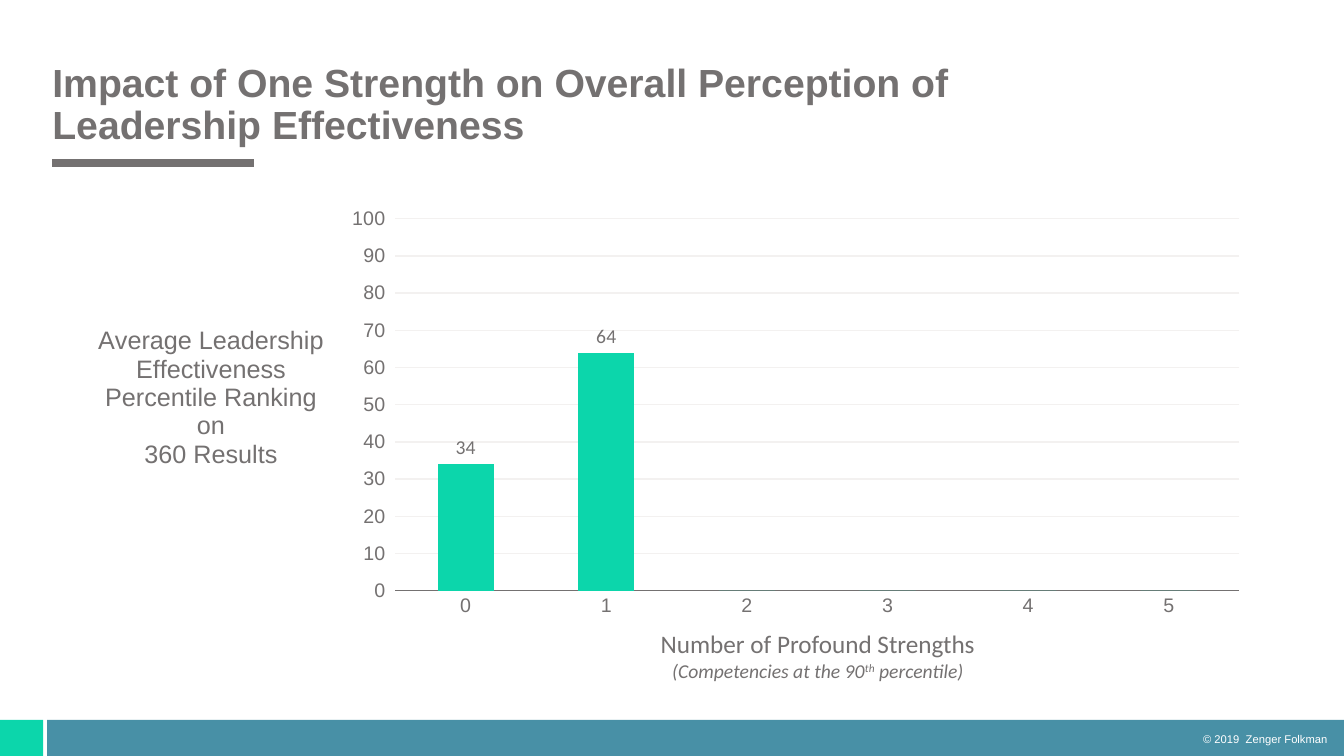
from lxml.etree import SubElement
from pptx import Presentation
from pptx.chart.data import CategoryChartData
from pptx.dml.color import RGBColor
from pptx.enum.chart import XL_CHART_TYPE, XL_LABEL_POSITION, XL_TICK_MARK
from pptx.enum.shapes import MSO_CONNECTOR, MSO_SHAPE
from pptx.enum.text import MSO_ANCHOR, PP_ALIGN
from pptx.oxml import parse_xml
from pptx.oxml.ns import nsdecls, qn
from pptx.util import Cm, Pt

GRAY, TEAL, BLUE, WHITE, GRID = "747171", "0CD6AB", "4890A6", "FFFFFF", "F3F1F0"
SLIDE_WIDTH, SLIDE_HEIGHT = 33.87, 19.05


def color(hex_string):
    """Turn a hex string into a color."""
    return RGBColor.from_string(hex_string)


def format_font(font, size, name="Arial", fill=GRAY, bold=False, italic=False):
    """Set the size, name, color and style of a font."""
    font.size, font.name, font.bold, font.italic = Pt(size), name, bold, italic
    font.color.rgb = color(fill)


def add_text(paragraph, text, superscript=False, **style):
    """Append formatted text, with a line break at each newline."""
    for number, line in enumerate(text.split("\n")):
        if number:
            paragraph.add_line_break()
        if line:
            run = paragraph.add_run()
            run.text = line
            format_font(run.font, **style)
            if superscript:
                run.font._element.set("baseline", "30000")


def add_text_box(slide, left, top, width, height, align, anchor):
    """Add a wrapping text box and return its first paragraph."""
    frame = slide.shapes.add_textbox(Cm(left), Cm(top), Cm(width), Cm(height)).text_frame
    frame.word_wrap = True
    frame.vertical_anchor = anchor
    paragraph = frame.paragraphs[0]
    paragraph.alignment = align
    return paragraph


def add_rectangle(slide, left, top, width, height, fill):
    """Add a plain filled rectangle."""
    shape = slide.shapes.add_shape(
        MSO_SHAPE.RECTANGLE, Cm(left), Cm(top), Cm(width), Cm(height))
    shape.shadow.inherit = False
    shape.fill.solid()
    shape.fill.fore_color.rgb = color(fill)
    shape.line.fill.background()


def add_heading(slide, left, top, width, height):
    """Add the title with the short rule below it."""
    paragraph = add_text_box(slide, left, top, width, height, PP_ALIGN.LEFT, MSO_ANCHOR.BOTTOM)
    paragraph.line_spacing = 0.9
    add_text(paragraph, "Impact of One Strength on Overall Perception of\nLeadership Effectiveness",
             size=28, bold=True)
    rule_left, rule_top = left + 0.25, top + height + 0.25
    rule = slide.shapes.add_connector(MSO_CONNECTOR.STRAIGHT, Cm(rule_left), Cm(rule_top),
                                      Cm(rule_left + 5.08), Cm(rule_top))
    rule.line.color.rgb = color(GRAY)
    rule.line.width = Pt(5.25)
    SubElement(rule._element.spPr, qn("a:effectLst"))


def set_layout(parent, index, **values):
    """Give a chart part a manual layout."""
    for layout in parent.findall(qn("c:layout")):
        parent.remove(layout)
    items = "".join(f'<c:{key} val="{value}"/>' for key, value in values.items())
    parent.insert(index, parse_xml(
        f'<c:layout {nsdecls("c")}><c:manualLayout>{items}</c:manualLayout></c:layout>'))


def format_axes(chart):
    """Format both axes, the gridlines and the value axis title."""
    category_axis, value_axis = chart.category_axis, chart.value_axis
    for axis in (category_axis, value_axis):
        format_font(axis.tick_labels.font, size=14)
    category_axis.major_tick_mark = XL_TICK_MARK.NONE
    category_axis.format.line.color.rgb = color(GRAY)
    category_axis.format.line.width = Pt(0.93)
    value_axis.minimum_scale, value_axis.maximum_scale, value_axis.major_unit = 0, 100, 10
    value_axis.format.line.fill.background()
    grid_line = value_axis.major_gridlines.format.line
    grid_line.color.rgb = color(GRID)
    grid_line.width = Pt(0.93)
    title = value_axis.axis_title
    frame = title.text_frame
    lines = ("Average Leadership Effectiveness Percentile Ranking on", "360 Results")
    for number, line in enumerate(lines):
        paragraph = frame.add_paragraph() if number else frame.paragraphs[0]
        paragraph.alignment = PP_ALIGN.CENTER
        add_text(paragraph, line, size=18)
    body = title._element.find(f'.//{qn("a:bodyPr")}')
    body.set("rot", "0")
    body.set("vert", "horz")
    set_layout(title._element, 1, xMode="edge", yMode="edge", x=0.002, y=0.25)


def add_strength_chart(slide, left, top, width, height):
    """Add the column chart with its caption."""
    data = CategoryChartData()
    data.categories = [str(count) for count in range(6)]
    data.add_series("Series 1", (34, 64, 0, 0, 0, 0))
    chart = slide.shapes.add_chart(XL_CHART_TYPE.COLUMN_CLUSTERED, Cm(left), Cm(top),
                                   Cm(width), Cm(height), data).chart
    chart.has_legend = chart.has_title = False
    format_font(chart.font, size=16.8, name="Calibri", bold=True)
    format_axes(chart)
    plot = chart.plots[0]
    plot.gap_width = 150
    plot.vary_by_categories = False
    fill = plot.series[0].format.fill
    fill.solid()
    fill.fore_color.rgb = color(TEAL)
    labels = plot.series[0].data_labels
    labels.show_value = True
    labels.number_format, labels.number_format_is_linked = "0;;;", False
    labels.position = XL_LABEL_POSITION.OUTSIDE_END
    format_font(labels.font, size=14, name="Calibri")
    set_layout(chart._chartSpace.chart.plotArea, 0, layoutTarget="inner", xMode="edge",
               yMode="edge", x=0.261, y=0.036, w=0.728, h=0.775)
    caption = add_text_box(slide, left + 10.23, top + 10.64, 16.08, 1.63,
                           PP_ALIGN.CENTER, MSO_ANCHOR.TOP)
    add_text(caption, "Number of Profound Strengths\n", size=18, name="Calibri")
    note = {"size": 14, "name": "Calibri", "italic": True}
    add_text(caption, "(Competencies at the 90", **note)
    add_text(caption, "th", superscript=True, **note)
    add_text(caption, " percentile)", **note)


def add_footer(slide, left, top, width, height):
    """Add the bottom band with the copyright line."""
    add_rectangle(slide, left + 1.19, top, width - 1.19, height, BLUE)
    add_rectangle(slide, left, top, 1.09, height, TEAL)
    paragraph = add_text_box(slide, left + width - 7.78, top + 0.17, 7.62, 0.64,
                             PP_ALIGN.RIGHT, MSO_ANCHOR.MIDDLE)
    add_text(paragraph, "© 2019  Zenger Folkman", size=8, fill=WHITE)


def main():
    """Build and save the presentation."""
    presentation = Presentation()
    presentation.slide_width, presentation.slide_height = Cm(SLIDE_WIDTH), Cm(SLIDE_HEIGHT)
    slide = presentation.slides.add_slide(presentation.slide_layouts[6])
    add_footer(slide, 0, SLIDE_HEIGHT - 0.91, SLIDE_WIDTH, 0.91)
    add_heading(slide, 1.07, 1.45, 31.88, 2.41)
    add_strength_chart(slide, 2.34, 5.08, 29.21, 12.09)
    presentation.save("out.pptx")


if __name__ == "__main__":
    main()
